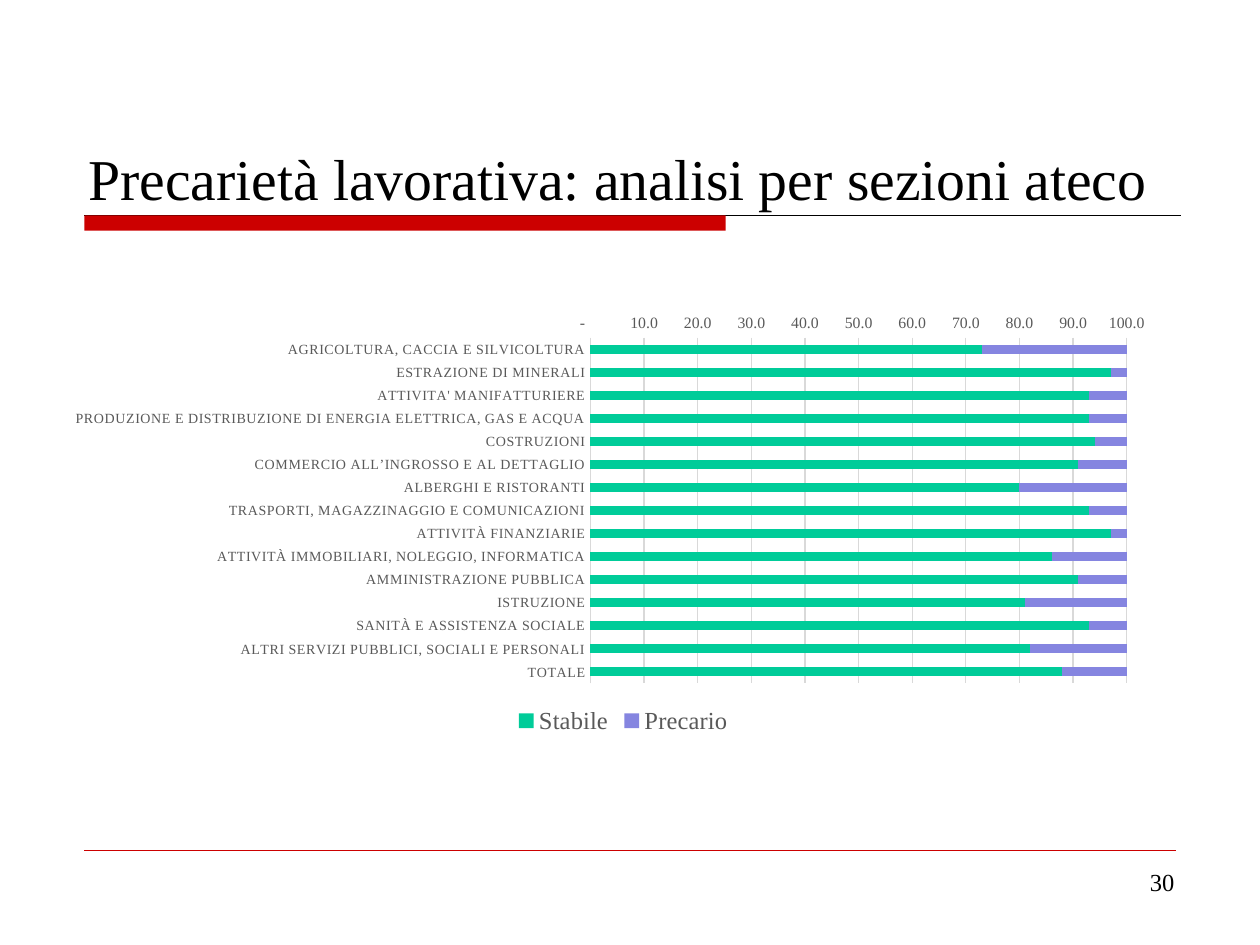
from lxml import etree
from pptx import Presentation
from pptx.chart.data import CategoryChartData
from pptx.dml.color import RGBColor
from pptx.enum.chart import XL_CHART_TYPE as CT, XL_LEGEND_POSITION as LP, XL_TICK_MARK as TM
from pptx.enum.shapes import MSO_CONNECTOR as MC, MSO_SHAPE as SH
from pptx.enum.text import MSO_ANCHOR as MA, PP_ALIGN as AL
from pptx.oxml import parse_xml
from pptx.oxml.ns import nsdecls, qn
from pptx.util import Inches, Pt

FONT = "Times New Roman"
BLACK, RED, GREY, GRID = "000000", "CC0000", "595959", "D9D9D9"
NUMBER_FORMAT = '_-* #,##0.0_-;\\-* #,##0.0_-;_-* "-"??_-;'

SECTORS = [
    ("AGRICOLTURA, CACCIA E SILVICOLTURA", 73, 27),
    ("ESTRAZIONE DI MINERALI", 97, 3),
    ("ATTIVITA' MANIFATTURIERE", 93, 7),
    ("PRODUZIONE E DISTRIBUZIONE DI ENERGIA ELETTRICA, GAS E ACQUA", 93, 7),
    ("COSTRUZIONI", 94, 6),
    ("COMMERCIO ALL’INGROSSO E AL DETTAGLIO", 91, 9),
    ("ALBERGHI E RISTORANTI", 80, 20),
    ("TRASPORTI, MAGAZZINAGGIO E COMUNICAZIONI", 93, 7),
    ("ATTIVITÀ FINANZIARIE", 97, 3),
    ("ATTIVITÀ IMMOBILIARI, NOLEGGIO, INFORMATICA", 86, 14),
    ("AMMINISTRAZIONE PUBBLICA", 91, 9),
    ("ISTRUZIONE", 81, 19),
    ("SANITÀ E ASSISTENZA SOCIALE", 93, 7),
    ("ALTRI SERVIZI PUBBLICI, SOCIALI E PERSONALI", 82, 18),
    ("TOTALE", 88, 12),
]
SERIES = [("Stabile", "00CC99"), ("Precario", "8585E0")]


def rgb(color):
    return RGBColor.from_string(color)


class Deck:
    def __init__(self):
        self.prs = Presentation()
        self.prs.slide_width, self.prs.slide_height = Inches(10), Inches(7.5)
        self.s = self.prs.slides.add_slide(self.prs.slide_layouts[5])

    def font(self, font, size, color):
        font.name, font.size = FONT, Pt(size)
        font.color.rgb = rgb(color)

    def fill_text(self, sp, text, size, align, anchor):
        tf = sp.text_frame
        tf.word_wrap, tf.vertical_anchor = True, anchor
        p = tf.paragraphs[0]
        p.alignment = align
        r = p.add_run()
        r.text = text
        self.font(r.font, size, BLACK)

    def title(self, text, x, y, w, h):
        sp = self.s.shapes.title
        sp.left, sp.top, sp.width, sp.height = map(Inches, (x, y, w, h))
        self.fill_text(sp, text, 33, AL.LEFT, MA.BOTTOM)

    def text(self, text, x, y, w, h, size, align):
        sp = self.s.shapes.add_textbox(*map(Inches, (x, y, w, h)))
        self.fill_text(sp, text, size, align, MA.TOP)

    def bar(self, x, y, w, h, color):
        sp = self.s.shapes.add_shape(SH.RECTANGLE, *map(Inches, (x, y, w, h)))
        sp.shadow.inherit = False
        sp.fill.solid()
        sp.fill.fore_color.rgb = rgb(color)
        sp.line.fill.background()

    def rule(self, x1, x2, y, color, width):
        line = self.s.shapes.add_connector(MC.STRAIGHT, *map(Inches, (x1, y, x2, y)))
        line.line.color.rgb = rgb(color)
        line.line.width = Pt(width)
        etree.SubElement(line._element.spPr, qn("a:effectLst"))

    def axis(self, axis, size):
        axis.major_tick_mark = axis.minor_tick_mark = TM.NONE
        self.font(axis.tick_labels.font, size, GREY)

    def plot_layout(self, chart, **box):
        edges = "".join(f'<c:{k} val="{v}"/>' for k, v in box.items())
        layout = parse_xml(
            f'<c:layout {nsdecls("c")}><c:manualLayout><c:layoutTarget val="inner"/>'
            f'<c:xMode val="edge"/><c:yMode val="edge"/>{edges}</c:manualLayout></c:layout>')
        area = chart._chartSpace.chart.plotArea
        for old in area.findall(qn("c:layout")):
            area.remove(old)
        area.insert(0, layout)

    def stacked_bars(self, rows, series, x, y, w, h):
        data = CategoryChartData()
        names, *columns = zip(*rows)
        data.categories = names
        for (name, _), values in zip(series, columns):
            data.add_series(name, values)
        chart = self.s.shapes.add_chart(
            CT.BAR_STACKED, *map(Inches, (x, y, w, h)), data).chart
        self.font(chart.font, 10, BLACK)
        chart.has_title = False
        plot = chart.plots[0]
        plot.vary_by_categories = False
        plot.gap_width, plot.overlap = 150, 100
        for ser, (_, color) in zip(plot.series, series):
            ser.format.fill.solid()
            ser.format.fill.fore_color.rgb = rgb(color)

        cat, val = chart.category_axis, chart.value_axis
        self.axis(cat, 8)
        cat.reverse_order = True
        cat.format.line.color.rgb = rgb(GRID)
        cat.format.line.width = Pt(0.75)
        cat.tick_labels.font._element.set("spc", "20")
        self.axis(val, 9)
        val.minimum_scale, val.maximum_scale, val.major_unit = 0, 100, 10
        val.format.line.fill.background()
        val.has_major_gridlines = True
        val.major_gridlines.format.line.color.rgb = rgb(GRID)
        val.major_gridlines.format.line.width = Pt(0.75)
        val.tick_labels.number_format = NUMBER_FORMAT
        val.tick_labels.number_format_is_linked = False

        chart.has_legend = True
        chart.legend.position = LP.BOTTOM
        chart.legend.include_in_layout = False
        self.font(chart.legend.font, 14, GREY)
        self.plot_layout(chart, x=0.47, y=0.07, w=0.49, h=0.8)


def main():
    deck = Deck()
    deck.rule(0.67, 9.37, 1.71, BLACK, 0.75)
    deck.bar(0.67, 1.71, 5.09, 0.12, RED)
    deck.rule(0.67, 9.33, 6.75, RED, 0.25)
    deck.title("Precarietà lavorativa: analisi per sezioni ateco", 0.6, 0.68, 9.19, 1.05)
    deck.text("30", 7.91, 6.83, 1.51, 0.52, 14, AL.RIGHT)
    deck.stacked_bars(SECTORS, SERIES, 0.6, 2.44, 8.69, 3.43)
    deck.prs.save("out.pptx")


if __name__ == "__main__":
    main()
